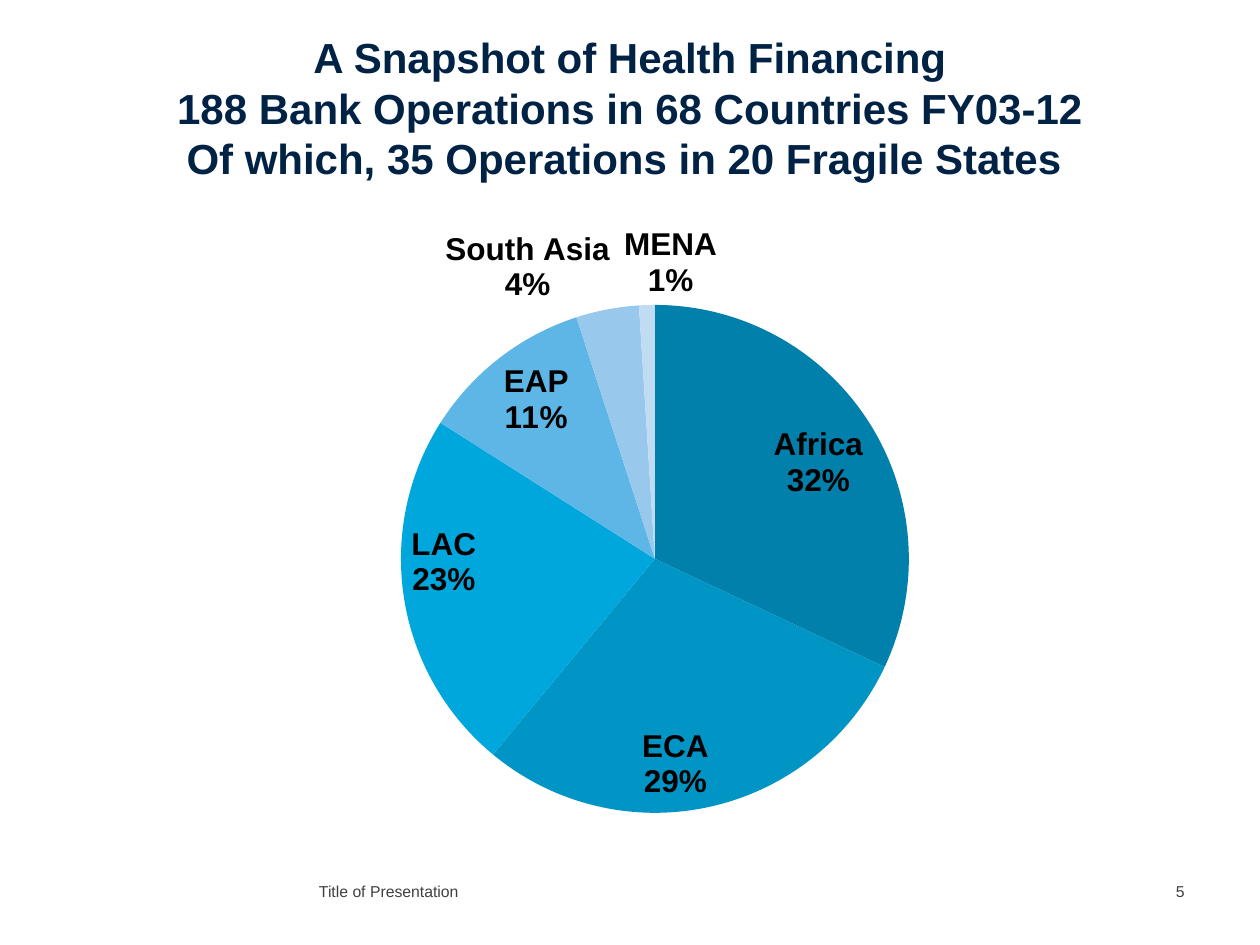
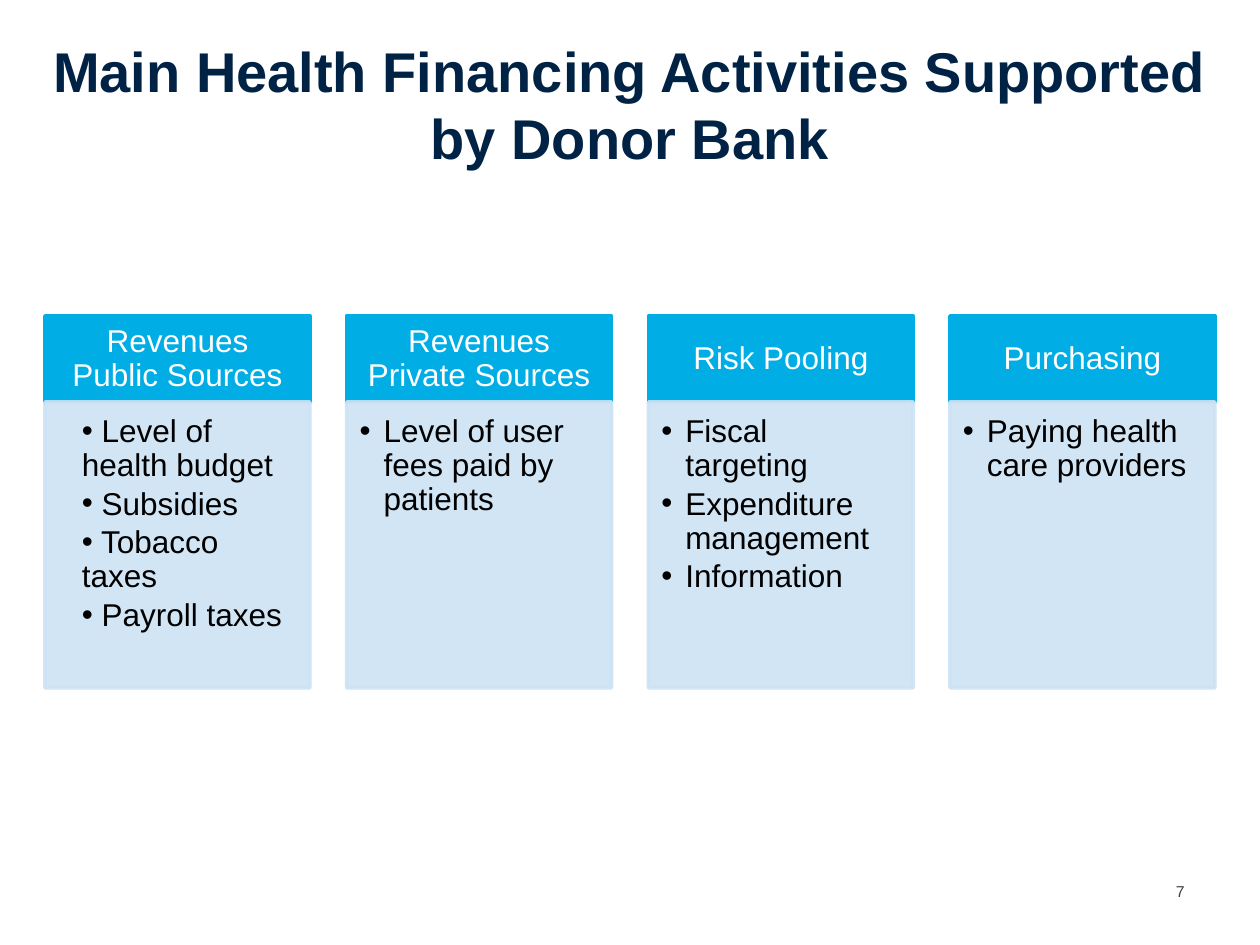
from dataclasses import dataclass

from lxml import etree
from pptx import Presentation
from pptx.chart.data import CategoryChartData
from pptx.dml.color import RGBColor
from pptx.enum.chart import XL_CHART_TYPE, XL_LABEL_POSITION
from pptx.enum.shapes import MSO_SHAPE
from pptx.enum.text import MSO_ANCHOR, MSO_AUTO_SIZE, PP_ALIGN
from pptx.oxml.ns import qn
from pptx.util import Emu, Pt

PIE = XL_CHART_TYPE.PIE
INSIDE_END, OUTSIDE_END = XL_LABEL_POSITION.INSIDE_END, XL_LABEL_POSITION.OUTSIDE_END
RECTANGLE = MSO_SHAPE.RECTANGLE
TOP, MIDDLE, BOTTOM = MSO_ANCHOR.TOP, MSO_ANCHOR.MIDDLE, MSO_ANCHOR.BOTTOM
NO_AUTOFIT = MSO_AUTO_SIZE.NONE
LEFT, CENTER = PP_ALIGN.LEFT, PP_ALIGN.CENTER

# Content
SNAPSHOT_TITLE = [
    "A Snapshot of Health Financing",
    "188 Bank Operations in 68 Countries FY03-12",
    "Of which, 35 Operations in 20 Fragile States ",
]
# region, share in percent, slice colour
REGIONS = [
    ("Africa", 32, "0080AA"),
    ("ECA", 29, "0095C5"),
    ("LAC", 23, "00A7DD"),
    ("EAP", 11, "5DB6E6"),
    ("South Asia", 4, "98C9ED"),
    ("MENA", 1, "C0DCF3"),
]
# labels outside the pie, with their sideways shift in px
OUTSIDE_LABELS = {"South Asia": 4, "MENA": 24}
ACTIVITIES_TITLE = ["Main Health Financing Activities Supported by Donor Bank"]
# heading, activities, whether wrapped lines hang under the text
ACTIVITIES = [
    ("Revenues Public Sources",
     [" Level of health budget", " Subsidies", " Tobacco taxes", " Payroll taxes"], False),
    ("Revenues Private Sources", ["Level of user fees paid by patients"], True),
    ("Risk Pooling", ["Fiscal targeting", "Expenditure management", "Information"], True),
    ("Purchasing", ["Paying health care providers"], True),
]
FOOTER = "Title of Presentation"


@dataclass(frozen=True)
class Theme:
    font: str = "Arial"
    navy: str = "002345"
    cyan: str = "00ADE4"
    pale: str = "CCE3F5"
    black: str = "000000"
    white: str = "FFFFFF"
    grey: str = "404040"
    footer_size: int = 9
    text_size: int = 18
    long_title_size: int = 24
    title_size: int = 32


THEME = Theme()

# Layout in px, 126 to the inch
SLIDE_SIZE = (1260, 945)
MARGIN, TITLE_TOP, TITLE_WIDTH = 45, 36, 1170
FOOTER_BOX = (319, 877, 629, 30)
NUMBER_BOX = (1176, 877, 39, 30)
CHART_BOX = (44, 209, 1168, 620)
PIE_BOX = (401, 305, 508, 508)
CARDS_RIGHT, CARD_WIDTH = 1215, 265
HEADING_TOP, HEADING_HEIGHT, LIST_HEIGHT = 316, 86, 286
BULLET_INDENT = 24


def px(length):
    return Emu(round(length * 914400 / 126))


def rgb(colour):
    return RGBColor.from_string(colour)


def style_font(font, size, colour, bold=False):
    font.name, font.size, font.bold = THEME.font, Pt(size), bold
    font.color.rgb = rgb(colour)


def add_run(paragraph, text, size, colour, bold=False):
    run = paragraph.add_run()
    run.text = text
    style_font(run.font, size, colour, bold)


def set_frame(frame, insets, anchor):
    frame.word_wrap, frame.auto_size = True, NO_AUTOFIT
    frame.vertical_anchor = anchor
    (frame.margin_left, frame.margin_top,
     frame.margin_right, frame.margin_bottom) = map(px, insets)


# Shared slide parts
def add_small_text(slide, box, text):
    frame = slide.shapes.add_textbox(*map(px, box)).text_frame
    set_frame(frame, (0, 5, 0, 0), TOP)
    add_run(frame.paragraphs[0], text, THEME.footer_size, THEME.grey)


def add_slide(deck, title_lines, title_size, title_height, number):
    slide = deck.slides.add_slide(deck.slide_layouts[5])
    title = slide.shapes.title
    title.left, title.top = px(MARGIN), px(TITLE_TOP)
    title.width, title.height = px(TITLE_WIDTH), px(title_height)
    set_frame(title.text_frame, (0, 0, 0, 2), BOTTOM)
    paragraph = title.text_frame.paragraphs[0]
    paragraph.alignment = CENTER
    for index, line in enumerate(title_lines):
        if index:
            paragraph.add_line_break()
        add_run(paragraph, line, title_size, THEME.navy, True)
    add_small_text(slide, NUMBER_BOX, str(number))
    return slide


# Pie of regions
def manual_layout(settings):
    layout = etree.Element(qn("c:layout"))
    manual = etree.SubElement(layout, qn("c:manualLayout"))
    for tag, value in settings:
        etree.SubElement(manual, qn(f"c:{tag}"), val=str(value))
    return layout


def place_pie(chart):
    plot_area = chart._chartSpace.chart.plotArea
    for old_layout in plot_area.findall(qn("c:layout")):
        plot_area.remove(old_layout)
    left, top, width, height = CHART_BOX
    plot_area.insert(0, manual_layout([
        ("layoutTarget", "inner"), ("xMode", "edge"), ("yMode", "edge"),
        ("x", (PIE_BOX[0] - left) / width), ("y", (PIE_BOX[1] - top) / height),
        ("w", PIE_BOX[2] / width), ("h", PIE_BOX[3] / height),
    ]))


def show_share_labels(labels):
    for tag, shown in (("showVal", "0"), ("showCatName", "1"), ("showPercent", "1")):
        labels.find(qn(f"c:{tag}")).set("val", shown)
    for leader_lines in labels.findall(qn("c:showLeaderLines")):
        leader_lines.set("val", "0")
    separator = etree.Element(qn("c:separator"))
    separator.text = "\n"
    labels.find(qn("c:showBubbleSize")).addnext(separator)


def move_label_outside(series, index, shift):
    label = series.points[index].data_label
    label.position = OUTSIDE_END
    style_font(label.font, THEME.text_size, THEME.black, True)
    element = series.data_labels._element.findall(qn("c:dLbl"))[-1]
    show_share_labels(element)
    offset = manual_layout([("x", shift / CHART_BOX[2]), ("y", 0)])
    element.find(qn("c:idx")).addnext(offset)


def add_region_pie(slide):
    shares = CategoryChartData()
    shares.categories = [region for region, *_ in REGIONS]
    shares.add_series("Series 1", [share for _, share, _ in REGIONS])
    chart = slide.shapes.add_chart(PIE, *map(px, CHART_BOX), shares).chart
    chart.has_legend = chart.has_title = False
    style_font(chart.font, THEME.text_size, THEME.black, True)
    chart.plots[0].vary_by_categories = True
    place_pie(chart)

    series = chart.plots[0].series[0]
    labels = series.data_labels
    labels.number_format, labels.number_format_is_linked = "0%", False
    labels.position = INSIDE_END
    show_share_labels(labels._element)
    for index, (region, _, colour) in enumerate(REGIONS):
        wedge = series.points[index].format
        wedge.fill.solid()
        wedge.fill.fore_color.rgb = rgb(colour)
        wedge.line.fill.background()
        if region in OUTSIDE_LABELS:
            move_label_outside(series, index, OUTSIDE_LABELS[region])


# Activity cards
def add_panel(slide, box, colour, opacity=100):
    panel = slide.shapes.add_shape(RECTANGLE, *map(px, box))
    panel.shadow.inherit = False
    panel.fill.solid()
    panel.fill.fore_color.rgb = panel.line.color.rgb = rgb(colour)
    panel.line.width = Pt(2)
    if opacity < 100:
        for shade in panel._element.spPr.iter(qn("a:srgbClr")):
            etree.SubElement(shade, qn("a:alpha"), val=str(opacity * 1000))
    return panel.text_frame


def add_bullet(paragraph, hanging):
    properties = paragraph._p.get_or_add_pPr()
    properties.set("marL", str(px(BULLET_INDENT)))
    properties.set("indent", str(px(-BULLET_INDENT if hanging else 0)))
    etree.SubElement(properties, qn("a:buFont"), typeface=THEME.font)
    etree.SubElement(properties, qn("a:buChar"), char="•")


def add_card(slide, left, heading, activities, hanging):
    frame = add_panel(slide, (left, HEADING_TOP, CARD_WIDTH, HEADING_HEIGHT), THEME.cyan)
    set_frame(frame, (18, 10, 18, 10), MIDDLE)
    paragraph = frame.paragraphs[0]
    paragraph.alignment, paragraph.line_spacing = CENTER, 0.9
    add_run(paragraph, heading, THEME.text_size, THEME.white)

    list_top = HEADING_TOP + HEADING_HEIGHT
    frame = add_panel(slide, (left, list_top, CARD_WIDTH, LIST_HEIGHT), THEME.pale, 90)
    set_frame(frame, (13, 13, 18, 20), TOP)
    for index, activity in enumerate(activities):
        paragraph = frame.add_paragraph() if index else frame.paragraphs[0]
        add_bullet(paragraph, hanging)
        paragraph.alignment, paragraph.line_spacing = LEFT, 0.9
        paragraph.space_after = Pt(2.7)
        add_run(paragraph, activity, THEME.text_size, THEME.black)


def main():
    deck = Presentation()
    deck.slide_width, deck.slide_height = map(px, SLIDE_SIZE)

    snapshot = add_slide(deck, SNAPSHOT_TITLE, THEME.long_title_size, 149, 5)
    add_small_text(snapshot, FOOTER_BOX, FOOTER)
    add_region_pie(snapshot)

    overview = add_slide(deck, ACTIVITIES_TITLE, THEME.title_size, 137, 7)
    pitch = (CARDS_RIGHT - MARGIN - CARD_WIDTH) / (len(ACTIVITIES) - 1)
    for index, card in enumerate(ACTIVITIES):
        add_card(overview, MARGIN + index * pitch, *card)

    deck.save("out.pptx")


if __name__ == "__main__":
    main()
